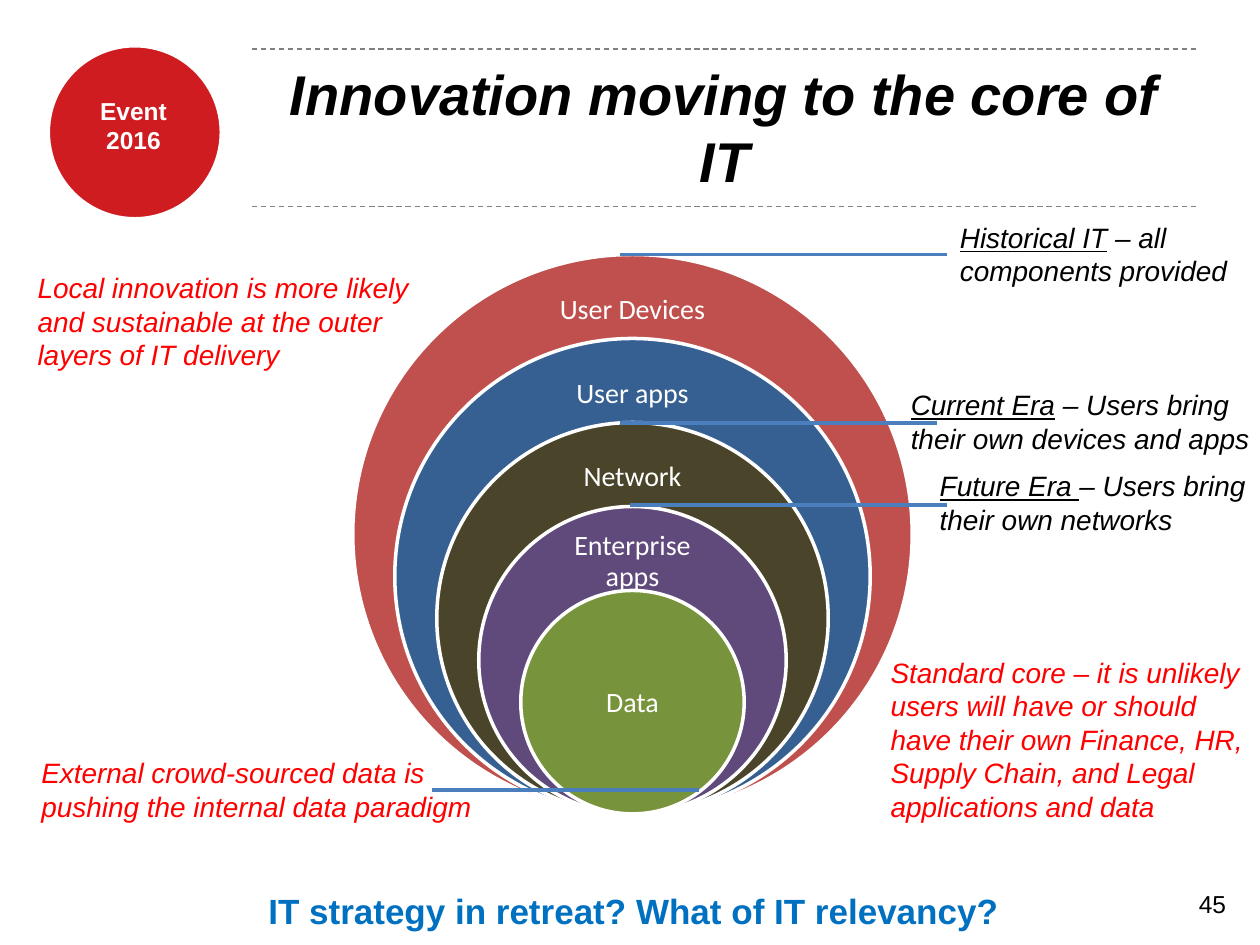
from pptx import Presentation
from pptx.dml.color import RGBColor
from pptx.enum.dml import MSO_LINE
from pptx.enum.shapes import MSO_CONNECTOR, MSO_SHAPE
from pptx.enum.text import MSO_ANCHOR, PP_ALIGN
from pptx.oxml.ns import qn
from pptx.util import Inches, Pt

LEFT, CENTER, RIGHT = PP_ALIGN.LEFT, PP_ALIGN.CENTER, PP_ALIGN.RIGHT
TOP, MIDDLE = MSO_ANCHOR.TOP, MSO_ANCHOR.MIDDLE
STRAIGHT, OVAL, DASH = MSO_CONNECTOR.STRAIGHT, MSO_SHAPE.OVAL, MSO_LINE.DASH
BLACK, WHITE, RED, BLUE = "000000", "FFFFFF", "FF0000", "0070C0"


def color(value):
    return RGBColor.from_string(value)


def add_text(lines, left, top, width, height, font="Arial", size=16, fill=BLACK,
             bold=False, italic=False, underlined="", align=LEFT, anchor=TOP,
             wrap=True, inset=None, spacing=None):
    """Add a text box; `underlined` is a lead-in to the first line."""
    box = slide.shapes.add_textbox(Inches(left), Inches(top), Inches(width), Inches(height))
    frame = box.text_frame
    frame.word_wrap = wrap
    frame.vertical_anchor = anchor
    if inset is not None:
        frame.margin_left = frame.margin_right = Inches(inset)
        frame.margin_top = frame.margin_bottom = Inches(inset)
    for index, line in enumerate(lines):
        paragraph = frame.add_paragraph() if index else frame.paragraphs[0]
        paragraph.alignment = align
        paragraph.line_spacing = spacing
        lead = underlined if index == 0 else ""
        for text, underline in ((lead, True), (line, False)):
            if not text:
                continue
            run = paragraph.add_run()
            run.text = text
            run.font.name = font
            run.font.size = Pt(size)
            run.font.bold = bold
            run.font.italic = italic
            run.font.underline = underline
            run.font.color.rgb = color(fill)


presentation = Presentation()
presentation.slide_width, presentation.slide_height = Inches(10), Inches(7.5)
slide = presentation.slides.add_slide(presentation.slide_layouts[6])

# Circles: a plain one beside the title, then nested rings sharing one bottom point
RING_CENTER, RING_BOTTOM, RING_STEP = 5.02, 6.46, 2 / 3
rings = [
    ("User Devices", "C0504D", 1.67),
    ("User apps", "376092", 1.63),
    ("Network", "4A452A", 1.61),
    ("Enterprise apps", "604A7B", 1.32),
    ("Data", "77933C", 1.26),
]
circles = [(0.38, 0.36, 1.38, "CF1C21", 2.5)]
labels = []
for index, (name, fill, label_width) in enumerate(rings):
    diameter = 4.44 - index * RING_STEP
    top = RING_BOTTOM - diameter
    circles.append((RING_CENTER - diameter / 2, top, diameter, fill, 2))
    core = name == "Data"
    labels.append((name, label_width, top + (0.45 if core else 0.22), 0.89 if core else 0.44))

for left, top, diameter, fill, line_width in circles:
    circle = slide.shapes.add_shape(OVAL, Inches(left), Inches(top),
                                    Inches(diameter), Inches(diameter))
    circle.shadow.inherit = False
    circle.fill.solid()
    circle.fill.fore_color.rgb = color(fill)
    circle.line.color.rgb = color(WHITE)
    circle.line.width = Pt(line_width)

for name, width, top, height in labels:
    add_text([name], RING_CENTER - width / 2, top, width, height, font="Calibri",
             fill=WHITE, align=CENTER, anchor=MIDDLE, inset=0.12, spacing=0.9)

# Title rules and ring pointers, all horizontal
for start, end, y, stroke, line_width, dash in [
    (2, 9.5, 0.39, "808080", 0.75, DASH),
    (2, 9.5, 1.64, "808080", 0.75, DASH),
    (4.92, 7.52, 2.02, "4B7EBC", 2.25, None),
    (4.92, 7.44, 3.36, "4B7EBC", 2.25, None),
    (5, 7.52, 4.01, "4B7EBC", 2.25, None),
    (3.43, 5.55, 6.27, "4B7EBC", 2.25, None),
]:
    connector = slide.shapes.add_connector(STRAIGHT, Inches(start), Inches(y),
                                           Inches(end), Inches(y))
    connector.line.color.rgb = color(stroke)
    connector.line.width = Pt(line_width)
    connector.line.dash_style = dash
    properties = connector._element.spPr
    properties.append(properties.makeelement(qn("a:effectLst"), {}))

# Event name and title
add_text(["Event", "2016"], 0.43, 0.76, 1.26, 0.47, size=14, fill=WHITE, bold=True,
         align=CENTER, inset=0)
add_text(["Innovation moving to the core of IT"], 2, 0.38, 7.5, 1.25, size=32,
         bold=True, italic=True, align=CENTER, anchor=MIDDLE)

# Eras of IT
for lead, lines, left, top, width in [
    ("Historical IT", [" – all", "components provided"], 7.52, 1.7, 2.41),
    ("Current Era", [" – Users bring", "their own devices and apps"], 7.13, 3.03, 2.92),
    ("Future Era ", ["– Users bring", "their own networks"], 7.36, 3.67, 2.72),
]:
    add_text(lines, left, top, width, 0.64, underlined=lead, italic=True, wrap=False)

# Red remarks
for lines, left, top, width, height, wrap in [
    (["Standard core – it is unlikely",
      "users will have or should have their own Finance, HR, Supply Chain, and Legal",
      "applications and data"], 6.97, 5.15, 3.03, 1.45, True),
    (["Local innovation is more likely", "and sustainable at the outer",
      "layers of IT delivery"], 0.2, 2.1, 3.24, 0.91, False),
    (["External crowd-sourced data is", "pushing the internal data paradigm"],
     0.23, 5.95, 3.66, 0.64, False),
]:
    add_text(lines, left, top, width, height, fill=RED, italic=True, wrap=wrap)

# Slide number and closing question
add_text(["45"], 8.5, 7.01, 1.33, 0.49, size=14, align=RIGHT)
add_text(["IT strategy in retreat? What of IT relevancy?"], 2.01, 7.01, 6.04, 0.44,
         size=20, fill=BLUE, bold=True, align=CENTER, wrap=False)

presentation.save("out.pptx")
